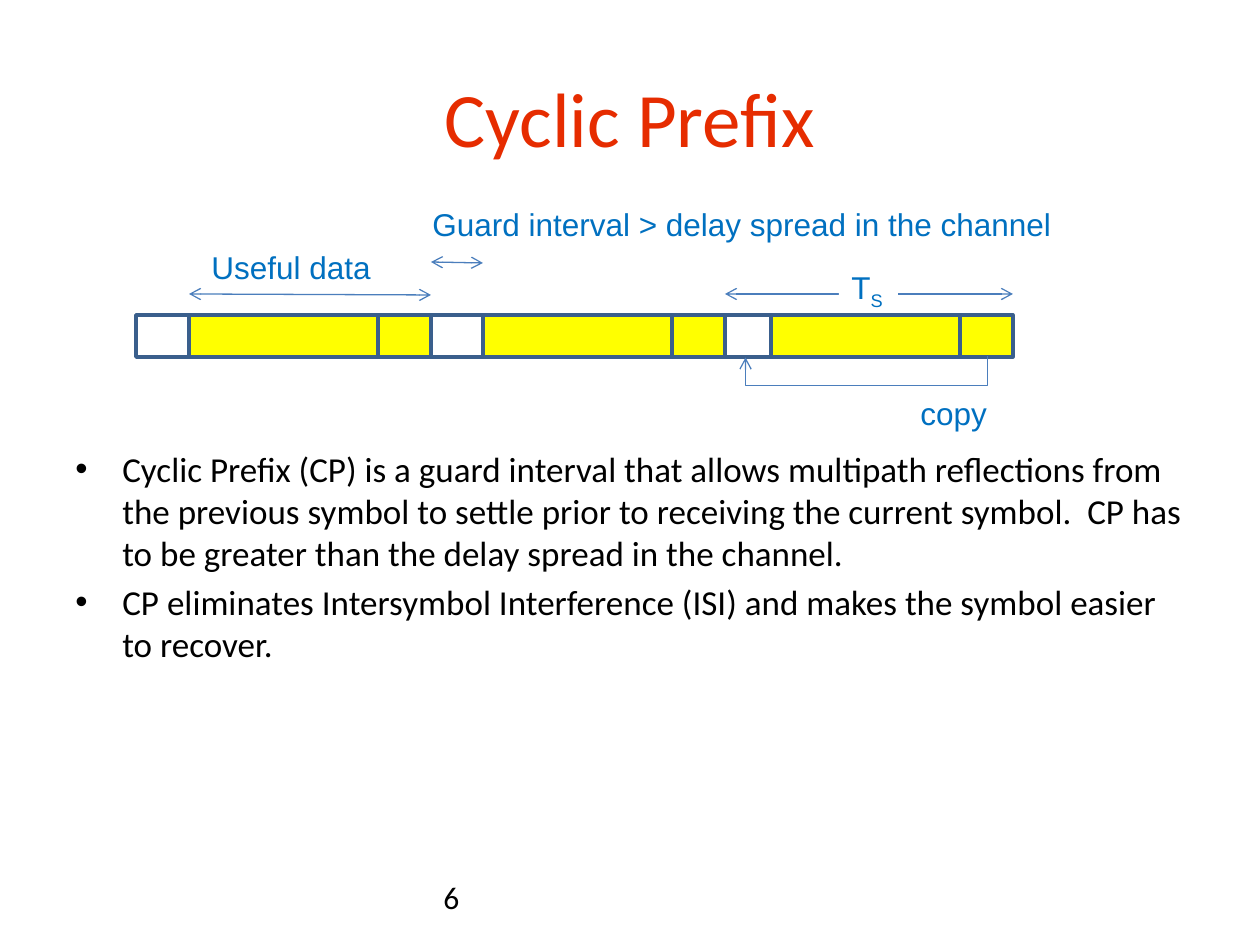
"""Build the Cyclic Prefix slide."""
import dataclasses

import lxml.etree
import pptx
import pptx.dml.color
import pptx.enum.shapes
import pptx.enum.text
import pptx.oxml.ns
import pptx.util

EMU_PER_INCH = 914400
PX_PER_INCH = 126
qn = pptx.oxml.ns.qn


def px(n):
    """Turn px into EMU."""
    return pptx.util.Emu(round(n * EMU_PER_INCH / PX_PER_INCH))


def rgb(value):
    """Turn a hex string into a colour."""
    return pptx.dml.color.RGBColor.from_string(value)


@dataclasses.dataclass(frozen=True)
class Theme:
    """Colours, fonts and sizes of the slide."""
    title: str = "E62C00"
    body: str = "000000"
    label: str = "0070C0"
    data: str = "FFFF00"
    paper: str = "FFFFFF"
    outline: str = "3A5F8C"
    arrow: str = "4B7EBC"
    text_font: str = "Calibri"
    label_font: str = "Arial"
    title_pt: int = 44
    body_pt: int = 20
    label_pt: int = 18
    outline_pt: float = 2
    arrow_pt: float = 0.75


class Slide:
    """Hold the theme and the current slide, and draw elements on it."""

    def __init__(self, prs, theme):
        """Add a blank slide."""
        self.theme = theme
        self.s = prs.slides.add_slide(prs.slide_layouts[6])

    def text(self, box, paragraphs, color, size, font, bullet=False, frame=None, **fmt):
        """Add a text box; each paragraph is a list of (text, baseline) runs."""
        sp = self.s.shapes.add_textbox(*map(px, box))
        tf = sp.text_frame
        for key, value in {"word_wrap": True, **(frame or {})}.items():
            setattr(tf, key, value)
        for i, runs in enumerate(paragraphs):
            p = tf.paragraphs[0] if i == 0 else tf.add_paragraph()
            if bullet:
                self.bullet(p)
            for key, value in fmt.items():
                setattr(p, key, value)
            if i:
                p.space_before = pptx.util.Pt(size * 0.2)
            for text, baseline in runs:
                r = p.add_run()
                r.text = text
                values = {"name": font, "size": pptx.util.Pt(size)}
                for key, value in values.items():
                    setattr(r.font, key, value)
                r.font.color.rgb = rgb(color)
                if baseline:
                    r.font._element.set("baseline", str(baseline))
        return sp

    def bullet(self, p):
        """Give a paragraph a round bullet and a hanging indent."""
        pPr = p._p.get_or_add_pPr()
        for key, value in {"marL": px(47), "indent": -px(47)}.items():
            pPr.set(key, str(value))
        lxml.etree.SubElement(pPr, qn("a:buFont")).set("typeface", self.theme.label_font)
        lxml.etree.SubElement(pPr, qn("a:buChar")).set("char", "•")

    def label(self, box, *runs):
        """Add a one-line diagram label."""
        t = self.theme
        frame = {"word_wrap": False,
                 "auto_size": pptx.enum.text.MSO_AUTO_SIZE.SHAPE_TO_FIT_TEXT}
        return self.text(box, [runs], t.label, t.label_pt, t.label_font, frame=frame)

    def cell(self, x, y, w, h, fill=None):
        """Add one outlined cell of the symbol bar."""
        sp = self.s.shapes.add_shape(
            pptx.enum.shapes.MSO_SHAPE.RECTANGLE, px(x), px(y), px(w), px(h))
        sp.shadow.inherit = False
        if fill:
            sp.fill.solid()
            sp.fill.fore_color.rgb = rgb(fill)
        else:
            sp.fill.background()
        sp.line.color.rgb = rgb(self.theme.outline)
        sp.line.width = pptx.util.Pt(self.theme.outline_pt)

    def arrow(self, x1, y1, x2, y2, ends=("headEnd", "tailEnd"), kind="STRAIGHT"):
        """Add a connector with open arrowheads at the given ends."""
        sp = self.s.shapes.add_connector(
            getattr(pptx.enum.shapes.MSO_CONNECTOR, kind), px(x1), px(y1), px(x2), px(y2))
        sp.line.color.rgb = rgb(self.theme.arrow)
        sp.line.width = pptx.util.Pt(self.theme.arrow_pt)
        ln = sp.line._get_or_add_ln()
        for end in ends:
            lxml.etree.SubElement(ln, qn(f"a:{end}")).set("type", "arrow")
        lxml.etree.SubElement(sp._element.spPr, qn("a:effectLst"))
        return sp

    def loop_arrow(self, x_from, x_to, y, drop):
        """Add an elbow arrow that dips below y and comes back up."""
        mid, half = (x_from + x_to) // 2, (x_from - x_to) // 2
        sp = self.arrow(mid, y - half, mid + 1, y + half, ("tailEnd",), "ELBOW")
        sp._element.spPr.find(qn("a:xfrm")).set("rot", str(90 * 60000))
        geom = sp._element.spPr.find(qn("a:prstGeom"))
        guides = geom.find(qn("a:avLst"))
        if guides is None:
            guides = lxml.etree.SubElement(geom, qn("a:avLst"))
        gd = lxml.etree.SubElement(guides, qn("a:gd"))
        for key, value in {"name": "adj1", "fmla": f"val {drop * 100000}"}.items():
            gd.set(key, value)


def main():
    """Draw the slide and save it."""
    prs = pptx.Presentation()
    prs.slide_width, prs.slide_height = px(1260), px(945)
    t = Theme()
    s = Slide(prs, t)
    s.text((63, 38, 1134, 157), [[("Cyclic Prefix", 0)]], t.title, t.title_pt, t.text_font,
           frame={"vertical_anchor": pptx.enum.text.MSO_ANCHOR.MIDDLE},
           alignment=pptx.enum.text.PP_ALIGN.CENTER)
    points = [
        "Cyclic Prefix (CP) is a guard interval that allows multipath reflections from "
        "the previous symbol to settle prior to receiving the current symbol.  CP has "
        "to be greater than the delay spread in the channel.",
        "CP eliminates Intersymbol Interference (ISI) and makes the symbol easier to recover.",
    ]
    s.text((63, 441, 1134, 382), [[(point, 0)] for point in points],
           t.body, t.body_pt, t.text_font, bullet=True)

    top, height, data, guard = 315, 42, 189, 53
    for x in (771, 483, 189):
        s.cell(x, top, data, height, t.data)
        s.cell(x + data, top, guard, height, t.data)
        s.cell(x - guard, top, guard, height)

    s.loop_arrow(987, 745, top + height, 29)
    s.arrow(725, 294, 1013, 294)
    symbol_time = s.label((839, 262, 59, 51), ("T", 0), ("S", -25000))
    symbol_time.fill.solid()
    symbol_time.fill.fore_color.rgb = rgb(t.paper)
    s.label((908, 388, 92, 51), ("copy", 0))
    s.arrow(431, 262, 483, 263)
    s.label((420, 199, 650, 51), ("Guard interval > delay spread in the channel", 0))
    s.arrow(189, 294, 431, 295)
    s.label((199, 242, 186, 51), ("Useful data", 0))
    s.text((431, 872, 294, 50), [[("6", 0)]], t.body, t.label_pt, t.text_font)
    prs.save("out.pptx")


if __name__ == "__main__":
    main()
